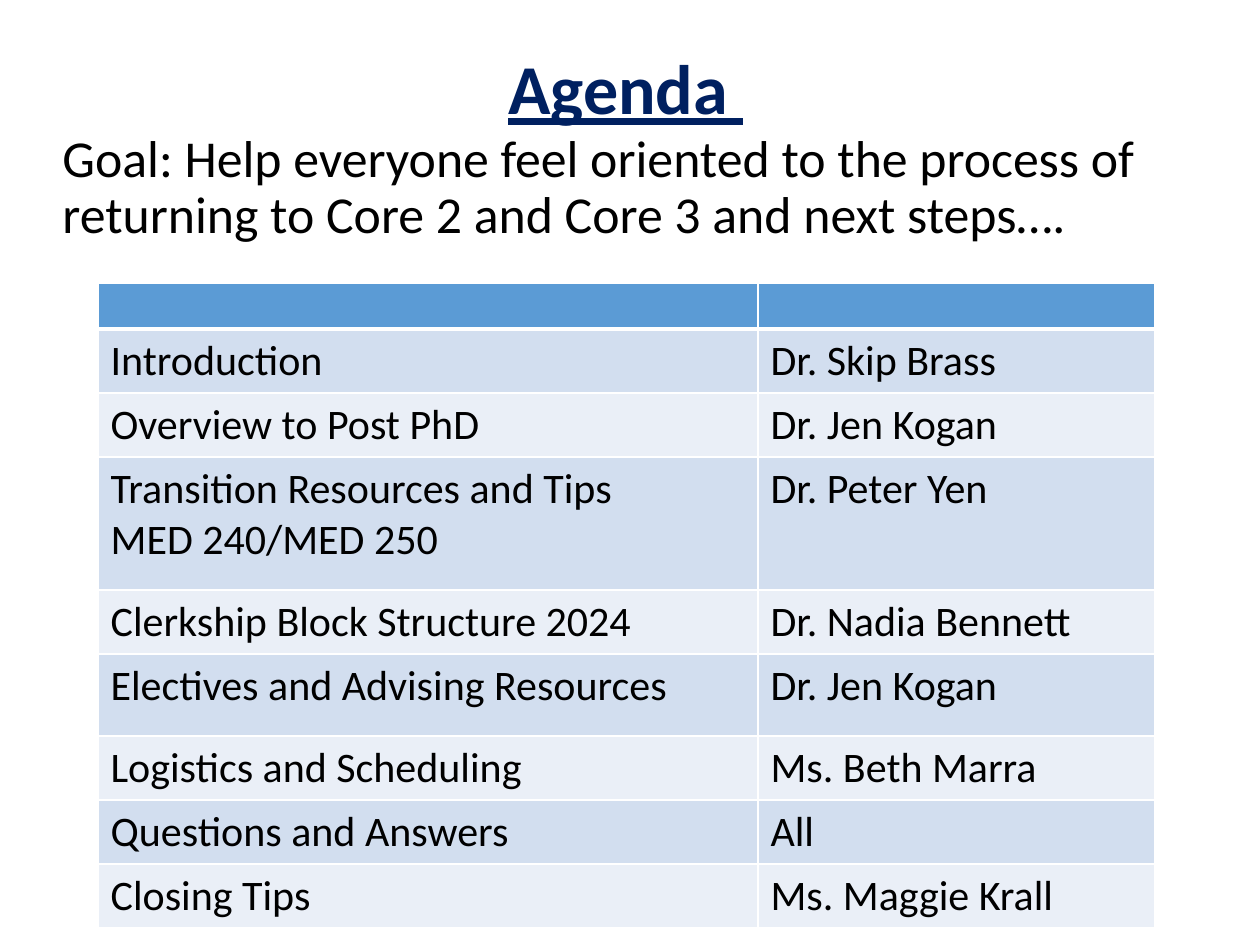
from lxml import etree
from pptx import Presentation
from pptx.dml.color import RGBColor
from pptx.enum.text import MSO_ANCHOR, PP_ALIGN
from pptx.oxml.ns import qn
from pptx.util import Pt

PX = 914400 // 126
FONT = "Calibri"
NAVY = RGBColor(0x00, 0x20, 0x60)
BLACK = RGBColor(0x00, 0x00, 0x00)
WHITE = RGBColor(0xFF, 0xFF, 0xFF)
HEADER_BLUE = RGBColor(0x5B, 0x9B, 0xD5)
BANDS = [RGBColor(0xEA, 0xEF, 0xF7), RGBColor(0xD2, 0xDE, 0xEF)]

TITLE = "Agenda\u00a0"
GOAL = ("Goal: Help everyone feel oriented to the process of returning "
        "to Core 2 and Core 3 and next steps….")

# Topic, speaker, row height in px
HEADER = ("", "", 46)
AGENDA = [
    ("Introduction", "Dr. Skip Brass", 64),
    ("Overview to Post PhD", "Dr. Jen Kogan", 64),
    ("Transition Resources and Tips\nMED 240/MED 250", "Dr. Peter Yen", 133),
    ("Clerkship Block Structure 2024", "Dr. Nadia Bennett", 64),
    ("Electives and Advising Resources", "Dr. Jen Kogan", 82),
    ("Logistics and Scheduling", "Ms. Beth Marra", 64),
    ("Questions and Answers", "All", 64),
    ("Closing Tips", "Ms. Maggie Krall", 64),
]
TABLE_LEFT, TABLE_TOP = 98, 283
COLUMN_WIDTHS = [660, 397]


def style_paragraph(paragraph, size, color):
    paragraph.font.name = FONT
    paragraph.font.size = Pt(size)
    paragraph.font.color.rgb = color


def add_text(page, text, place, size, color):
    box = page.shapes.add_textbox(*(value * PX for value in place))
    box.text_frame.word_wrap = True
    paragraph = box.text_frame.paragraphs[0]
    paragraph.text = text
    paragraph.line_spacing = 0.9
    style_paragraph(paragraph, size, color)
    return box.text_frame


def set_borders(cell, top, bottom):
    """Draw white cell borders; top and bottom are widths in points."""
    properties = cell._tc.get_or_add_tcPr()
    sides = [("lnL", 1), ("lnR", 1), ("lnT", top), ("lnB", bottom)]
    for side, width in sides:
        line = etree.SubElement(properties, qn(f"a:{side}"), w=str(Pt(width)))
        fill = etree.SubElement(line, qn("a:solidFill"))
        etree.SubElement(fill, qn("a:srgbClr"), val=str(WHITE))


def fill_cell(cell, text, color):
    cell.fill.solid()
    cell.fill.fore_color.rgb = color
    if not text:
        cell.margin_top = cell.margin_bottom = 0
        return
    cell.text = text
    for paragraph in cell.text_frame.paragraphs:
        style_paragraph(paragraph, 24, BLACK)


def add_agenda(page):
    rows = [HEADER] + AGENDA
    height = sum(row[2] for row in rows)
    table = page.shapes.add_table(
        len(rows), len(COLUMN_WIDTHS), TABLE_LEFT * PX, TABLE_TOP * PX,
        sum(COLUMN_WIDTHS) * PX, height * PX).table
    for column, width in zip(table.columns, COLUMN_WIDTHS):
        column.width = width * PX
    for index, (*texts, row_height) in enumerate(rows):
        table.rows[index].height = row_height * PX
        color = BANDS[index % 2] if index else HEADER_BLUE
        for cell, text in zip(table.rows[index].cells, texts):
            set_borders(cell, 3 if index == 1 else 1, 3 if index == 0 else 1)
            fill_cell(cell, text, color)


def main():
    deck = Presentation()
    deck.slide_width, deck.slide_height = 1260 * PX, 945 * PX
    page = deck.slides.add_slide(deck.slide_layouts[6])

    title = add_text(page, TITLE, (83, 0, 1086, 183), 40, NAVY)
    title.vertical_anchor = MSO_ANCHOR.MIDDLE
    heading = title.paragraphs[0]
    heading.alignment = PP_ALIGN.CENTER
    heading.font.bold = heading.font.underline = True

    add_text(page, GOAL, (50, 127, 1119, 137), 29.6, BLACK)
    add_agenda(page)
    deck.save("out.pptx")


if __name__ == "__main__":
    main()
